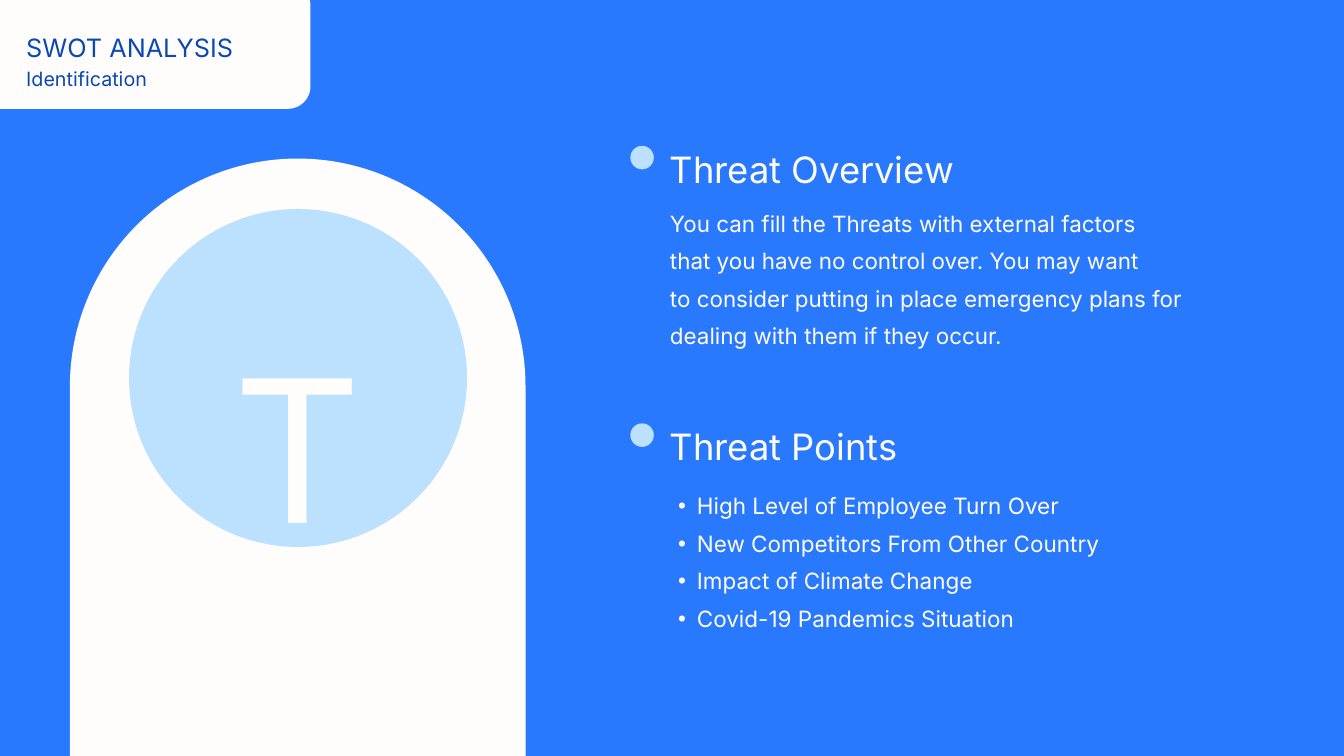
from lxml import etree
from pptx import Presentation
from pptx.dml.color import RGBColor
from pptx.enum.shapes import MSO_SHAPE
from pptx.enum.text import MSO_AUTO_SIZE, PP_ALIGN
from pptx.oxml.ns import qn
from pptx.util import Inches, Pt

OVAL = MSO_SHAPE.OVAL
ROUND = MSO_SHAPE.ROUNDED_RECTANGLE
ARCH = MSO_SHAPE.ROUND_2_SAME_RECTANGLE
LEFT, MID = PP_ALIGN.LEFT, PP_ALIGN.CENTER
GROW = MSO_AUTO_SIZE.SHAPE_TO_FIT_TEXT

BLUE = RGBColor(0x29, 0x79, 0xFF)
NAVY = RGBColor(0x0B, 0x48, 0xB3)
SKY = RGBColor(0xBC, 0xE1, 0xFF)
WHITE = RGBColor(0xFF, 0xFC, 0xFC)

WIDE, HIGH = Inches(20), Inches(11.25)
COL, ROW = WIDE / 20, HIGH / 11.25
FONT = "Inter"
DOT, DOT_COL, TEXT_COL = 0.35, 9.38, 9.97

ABOUT = [
    "You can fill the Threats with external factors",
    "that you have no control over. You may want",
    "to consider putting in place emergency plans for",
    "dealing with them if they occur.",
]
POINTS = [
    "High Level of Employee Turn Over",
    "New Competitors From Other Country",
    "Impact of Climate Change",
    "Covid-19 Pandemics Situation",
]


def cells(x, y, w, h):
    """Turn grid columns and rows into slide lengths."""
    return int(x * COL), int(y * ROW), int(w * COL), int(h * ROW)


def add_form(slide, kind, box, fill, curve=None):
    """Add a plain filled shape, with an optional corner share."""
    form = slide.shapes.add_shape(kind, *cells(*box))
    form.shadow.inherit = False
    form.fill.solid()
    form.fill.fore_color.rgb = fill
    form.line.fill.background()
    if curve is not None:
        form.adjustments[0] = curve


def add_text(slide, lines, box, size, color=WHITE, align=LEFT):
    """Add a text box with one paragraph per line."""
    frame = slide.shapes.add_textbox(*cells(*box)).text_frame
    frame.margin_left = frame.margin_right = 0
    frame.margin_top = frame.margin_bottom = 0
    frame.word_wrap = True
    frame.auto_size = GROW
    frame.text = "\n".join(lines)
    for para in frame.paragraphs:
        para.alignment = align
        para.line_spacing = 1.4
        for run in para.runs:
            run.font.name = FONT
            run.font.size = Pt(size)
            run.font.color.rgb = color
    return frame


def add_marks(frame, color):
    """Give each paragraph a round bullet and a hanging indent."""
    for para in frame.paragraphs:
        para.level = 1
        props = para._p.get_or_add_pPr()
        props.set("marL", str(int(0.57 * COL)))
        props.set("indent", str(int(-0.28 * COL)))
        tint = etree.SubElement(props, qn("a:buClr"))
        etree.SubElement(tint, qn("a:srgbClr"), val=str(color))
        etree.SubElement(props, qn("a:buFont"), typeface="Arial")
        etree.SubElement(props, qn("a:buChar"), char="•")


def add_head(slide, title, top):
    """Add a section title with its dot."""
    add_text(slide, [title], (TEXT_COL, top, 7.08, 0.73), 38.9)
    add_form(slide, OVAL, (DOT_COL, top + 0.24, DOT, DOT), SKY)


def add_tab(slide):
    """Add the corner tab with the deck title."""
    add_form(slide, ROUND, (-0.56, -0.25, 5.18, 1.87), WHITE, 0.18)
    add_text(slide, ["SWOT ANALYSIS"], (0.39, 0.3, 4.04, 0.5), 27.1, NAVY)
    add_text(slide, ["Identification"], (0.39, 0.85, 2.84, 0.39), 21.1, NAVY)


def add_badge(slide, letter):
    """Add the arch with the big letter in a disc."""
    add_form(slide, ARCH, (1.04, 2.36, 6.78, 10.14), WHITE, 0.5)
    add_form(slide, OVAL, (1.92, 3.11, 5.03, 5.03), SKY)
    add_text(slide, [letter], (2.71, 3.41, 3.45, 4), 213, align=MID)


def main():
    """Build and save the threat slide."""
    deck = Presentation()
    deck.slide_width, deck.slide_height = WIDE, HIGH
    slide = deck.slides.add_slide(deck.slide_layouts[6])
    slide.background.fill.solid()
    slide.background.fill.fore_color.rgb = BLUE

    add_tab(slide)
    add_badge(slide, "T")
    add_head(slide, "Threat Overview", 1.93)
    add_text(slide, ABOUT, (TEXT_COL, 2.96, 9.76, 1.82), 24)
    add_head(slide, "Threat Points", 6.06)
    add_marks(add_text(slide, POINTS, (9.8, 7.16, 9.08, 1.83), 24.1), WHITE)
    deck.save("out.pptx")


if __name__ == "__main__":
    main()
